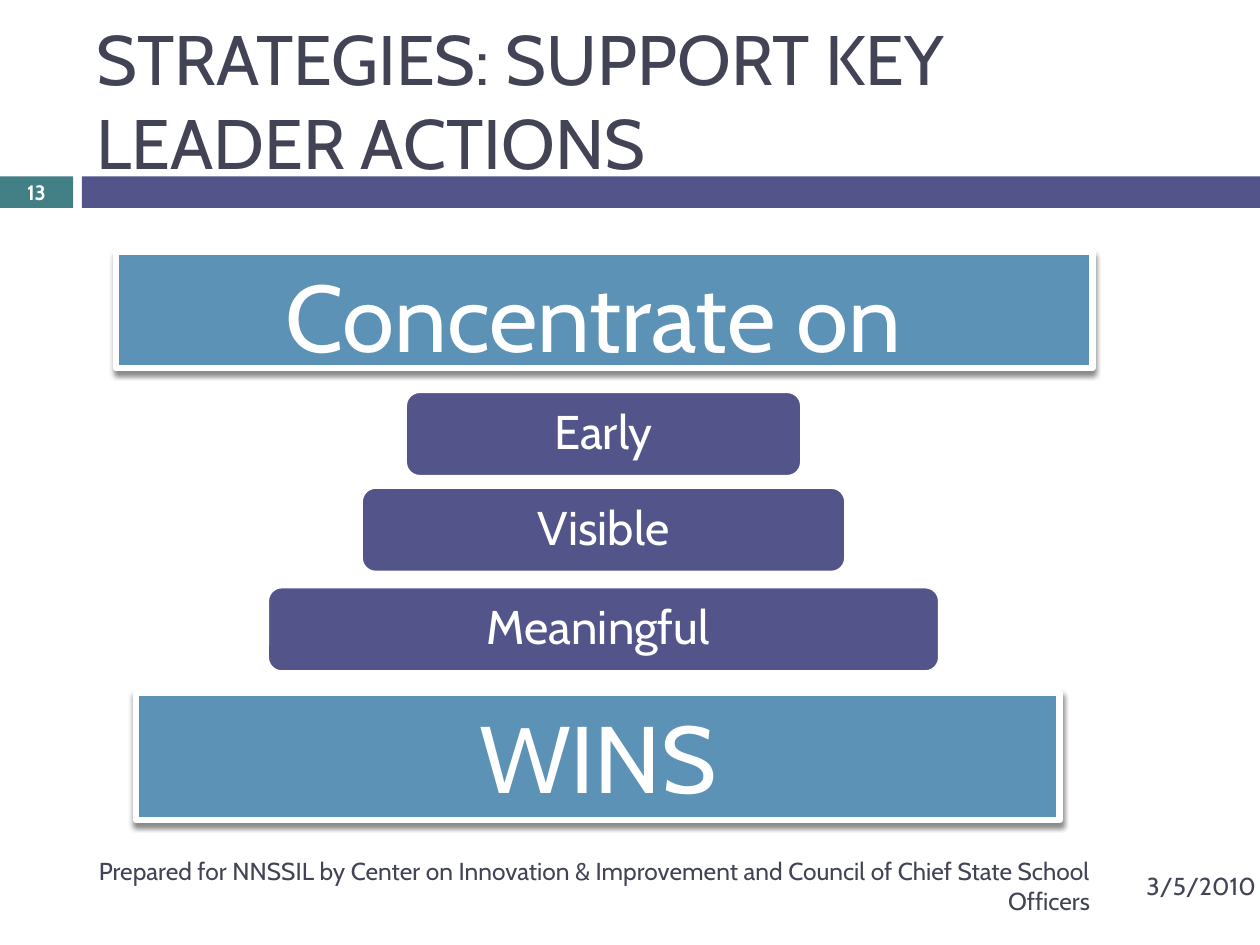
"""Build the slide on supporting key leader actions."""
from dataclasses import dataclass

from lxml.etree import SubElement
from pptx import Presentation
from pptx.dml.color import RGBColor
from pptx.enum.shapes import MSO_SHAPE
from pptx.enum.text import MSO_ANCHOR, PP_ALIGN
from pptx.oxml.ns import qn
from pptx.shapes.autoshape import Shape
from pptx.slide import Slide
from pptx.util import Inches, Pt

FONT = "Cabin"
COLORS = {
    "ink": "424456",
    "white": "FFFFFF",
    "teal": "438086",
    "purple": "53548A",
    "blue": "5C92B5",
    "shadow": "000000",
}
QUALITIES_CENTER = 4.79
QUALITY_HEIGHT = 0.67


@dataclass
class Box:
    """Position and size in inches."""

    left: float
    top: float
    width: float
    height: float

    def lengths(self) -> list[Inches]:
        """Return the four values as lengths."""
        return [Inches(v) for v in (self.left, self.top, self.width, self.height)]


@dataclass
class Label:
    """Wording and its typography."""

    text: str
    size: float
    color: str = "white"
    align: PP_ALIGN = PP_ALIGN.CENTER
    anchor: MSO_ANCHOR = MSO_ANCHOR.MIDDLE
    bold: bool = False
    line_spacing: float = 1.0


@dataclass
class Quality:
    """One step of the widening stack."""

    word: str
    top: float
    width: float


def write(shape: Shape, label: Label) -> None:
    """Write a label into a shape."""
    frame = shape.text_frame
    frame.word_wrap = True
    frame.vertical_anchor = label.anchor
    paragraph = frame.paragraphs[0]
    paragraph.alignment = label.align
    paragraph.line_spacing = label.line_spacing
    run = paragraph.add_run()
    run.text = label.text
    run.font.name = FONT
    run.font.size = Pt(label.size)
    run.font.bold = label.bold
    run.font.color.rgb = RGBColor.from_string(COLORS[label.color])


def add_label(slide: Slide, box: Box, label: Label) -> None:
    """Add a text box holding a label."""
    write(slide.shapes.add_textbox(*box.lengths()), label)


def add_block(slide: Slide, box: Box, fill: str, outline: float = 0,
              preset: MSO_SHAPE = MSO_SHAPE.RECTANGLE) -> Shape:
    """Add a filled block with an optional white outline."""
    block = slide.shapes.add_shape(preset, *box.lengths())
    block.shadow.inherit = False
    block.fill.solid()
    block.fill.fore_color.rgb = RGBColor.from_string(COLORS[fill])
    if outline:
        block.line.color.rgb = RGBColor.from_string(COLORS["white"])
        block.line.width = Pt(outline)
    else:
        block.line.fill.background()
    return block


def add_banner(slide: Slide, box: Box, text: str) -> None:
    """Add a large blue banner with a soft shadow below it."""
    banner = add_block(slide, box, "blue", 3.75)
    effects = banner._element.spPr.find(qn("a:effectLst"))
    shadow = SubElement(effects, qn("a:outerShdw"), blurRad=str(Pt(3)),
                        dist=str(Pt(2.4)), dir="5400000", rotWithShape="0")
    tint = SubElement(shadow, qn("a:srgbClr"), val=COLORS["shadow"])
    SubElement(tint, qn("a:alpha"), val="45000")
    write(banner, Label(text, 54, anchor=MSO_ANCHOR.TOP))


def add_quality(slide: Slide, quality: Quality) -> None:
    """Add one centred step of the stack."""
    left = QUALITIES_CENTER - quality.width / 2
    box = Box(left, quality.top, quality.width, QUALITY_HEIGHT)
    step = add_block(slide, box, "purple", 1.5, MSO_SHAPE.ROUNDED_RECTANGLE)
    write(step, Label(quality.word, 27, line_spacing=0.9))


def main() -> None:
    """Build and save the slide."""
    deck = Presentation()
    deck.slide_width, deck.slide_height = Inches(10), Inches(7.5)
    slide = deck.slides.add_slide(deck.slide_layouts[6])

    add_block(slide, Box(0, 1.4, 0.58, 0.25), "teal")
    add_block(slide, Box(0.65, 1.4, 9.35, 0.25), "purple")
    add_label(slide, Box(0.67, 0, 9, 1.58),
              Label("STRATEGIES: SUPPORT KEY LEADER ACTIONS", 40, "ink", PP_ALIGN.LEFT))

    add_banner(slide, Box(0.92, 2, 7.75, 0.92), "Concentrate on ")
    for quality in (
        Quality("Early", 3.11, 3.14),
        Quality("Visible", 3.87, 3.84),
        Quality("Meaningful ", 4.66, 5.33),
    ):
        add_quality(slide, quality)
    add_banner(slide, Box(1.08, 5.5, 7.33, 1.01), "WINS")

    add_label(slide, Box(0, 1.39, 0.58, 0.27), Label("13", 11.9, bold=True))
    add_label(slide, Box(9, 6.83, 1.08, 0.4),
              Label("3/5/2010", 14, "ink", PP_ALIGN.LEFT))
    add_label(slide, Box(0.42, 6.83, 8.33, 0.4),
              Label("Prepared for NNSSIL by Center on Innovation & Improvement "
                    "and Council of Chief State School Officers",
                    14, "ink", PP_ALIGN.RIGHT))
    deck.save("out.pptx")


if __name__ == "__main__":
    main()
